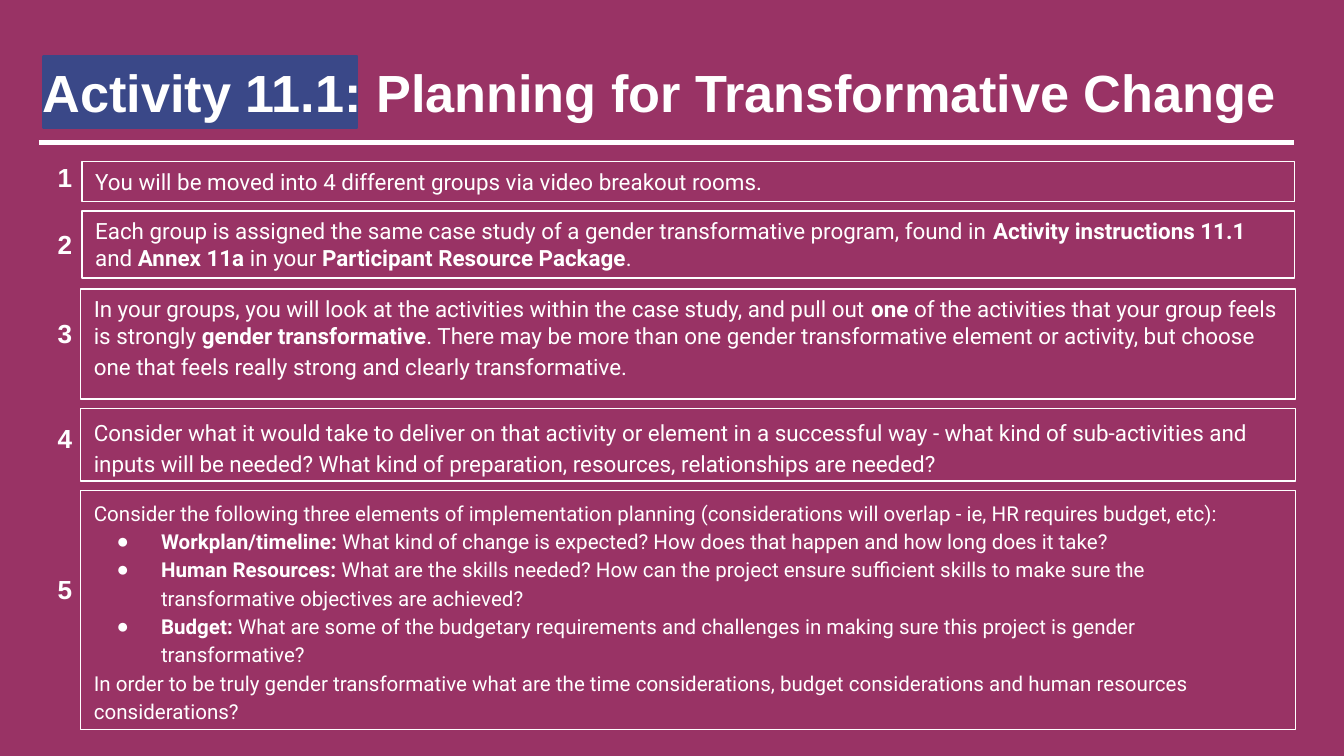
from dataclasses import dataclass
from typing import Optional

from lxml import etree
from pptx import Presentation
from pptx import util as u
from pptx.dml.color import RGBColor
from pptx.enum import shapes, text
from pptx.oxml import ns

COLORS = {"plum": "993365", "navy": "3A4888", "white": "FFFFFF"}
TITLE_FORMAT = {"name": "Arial", "size": u.Pt(28), "bold": True}
NUMBER_FORMAT = {"name": "Arial", "size": u.Pt(14), "bold": True}
BULLET = "• "  # marks a bulleted paragraph in the step wording


@dataclass
class Step:
    left: float
    top: float
    width: float
    height: float
    number_top: float
    paragraphs: list[str]  # bold stretches stand between ** marks
    size: int = 12
    spacing: Optional[float] = None
    end_space: Optional[int] = None  # size of a closing space


STEPS = [
    Step(0.61, 1.2, 9.02, 0.3, 1.1, [
        "You will be moved into 4 different groups via video breakout rooms."]),
    Step(0.61, 1.57, 9.02, 0.5, 1.6, [
        "Each group is assigned the same case study of a gender transformative program, "
        "found in **Activity instructions 11.1 **and **Annex 11a **in your "
        "**Participant Resource Package**."]),
    Step(0.6, 2.15, 9.04, 0.82, 2.26, [
        "In your groups, you will look at the activities within the case study, and pull out "
        "**one **of the activities that your group feels is strongly "
        "**gender transformative**. There may be more than one gender transformative element "
        "or activity, but choose one that feels really strong and clearly transformative."],
        end_space=14),
    Step(0.6, 3.04, 9.04, 0.54, 3.04, [
        "Consider what it would take to deliver on that activity or element in a successful "
        "way - what kind of sub-activities and inputs will be needed? What kind of "
        "preparation, resources, relationships are needed?"], spacing=1.15),
    Step(0.6, 3.65, 9.04, 1.78, 4.17, [
        "Consider the following three elements of implementation planning "
        "(considerations will overlap - ie, HR requires budget, etc):",
        BULLET + "**Workplan/timeline: **What kind of change is expected? "
        "How does that happen and how long does it take?",
        BULLET + "**Human Resources: **What are the skills needed? How can the project ensure "
        "sufficient skills to make sure the transformative objectives are achieved?",
        BULLET + "**Budget: **What are some of the budgetary requirements and challenges in "
        "making sure this project is gender transformative?",
        "In order to be truly gender transformative what are the time considerations, "
        "budget considerations and human resources considerations?"],
        size=11, spacing=1.15),
]


def color(name: str) -> RGBColor:
    return RGBColor.from_string(COLORS[name])


def add_run(paragraph, wording: str, style: dict) -> None:
    run = paragraph.add_run()
    run.text = wording
    for key, value in style.items():
        setattr(run.font, key, value)
    run.font.color.rgb = color("white")


def set_frame(frame, inset: float) -> None:
    settings = {
        "word_wrap": True, "auto_size": text.MSO_AUTO_SIZE.SHAPE_TO_FIT_TEXT,
        "vertical_anchor": text.MSO_ANCHOR.TOP,
        "margin_left": u.Inches(0.1), "margin_right": u.Inches(0.1),
        "margin_top": u.Inches(inset), "margin_bottom": u.Inches(inset),
    }
    for key, value in settings.items():
        setattr(frame, key, value)


def add_bullet(paragraph) -> None:
    props = paragraph._p.get_or_add_pPr()
    props.set("marL", str(u.Inches(0.5)))
    props.set("indent", str(u.Inches(-0.33)))
    tint = etree.SubElement(props, ns.qn("a:buClr"))
    etree.SubElement(tint, ns.qn("a:srgbClr"), val=COLORS["white"])
    etree.SubElement(props, ns.qn("a:buFont"), typeface="Arial")
    etree.SubElement(props, ns.qn("a:buChar"), char="●")


def add_label(slide, wording: str, box: tuple, inset: float, style: dict) -> None:
    label = slide.shapes.add_textbox(*map(u.Inches, box))
    set_frame(label.text_frame, inset)
    add_run(label.text_frame.paragraphs[0], wording, style)


def add_rectangle(slide, box: tuple, line: str, weight: float, fill: Optional[str] = None):
    rectangle = slide.shapes.add_shape(shapes.MSO_SHAPE.RECTANGLE, *map(u.Inches, box))
    rectangle.shadow.inherit = False
    if fill:
        rectangle.fill.solid()
        rectangle.fill.fore_color.rgb = color(fill)
    else:
        rectangle.fill.background()
    rectangle.line.color.rgb = color(line)
    rectangle.line.width = u.Pt(weight)
    return rectangle


def add_step(slide, step: Step) -> None:
    box = (step.left, step.top, step.width, step.height)
    frame = add_rectangle(slide, box, "white", 0.75).text_frame
    set_frame(frame, 0.05)
    for index, wording in enumerate(step.paragraphs):
        paragraph = frame.add_paragraph() if index else frame.paragraphs[0]
        paragraph.alignment = text.PP_ALIGN.LEFT
        if step.spacing:
            paragraph.line_spacing = step.spacing
        if wording.startswith(BULLET):
            add_bullet(paragraph)
        for part, stretch in enumerate(wording.removeprefix(BULLET).split("**")):
            if stretch:
                add_run(paragraph, stretch, {
                    "name": "Roboto", "size": u.Pt(step.size), "bold": part % 2 == 1})
    if step.end_space:
        add_run(paragraph, " ", {"name": "Roboto", "size": u.Pt(step.end_space)})


def main() -> None:
    deck = Presentation()
    deck.slide_width = u.Inches(10)
    deck.slide_height = deck.slide_width * 9 // 16
    slide = deck.slides.add_slide(deck.slide_layouts[6])
    slide.background.fill.solid()
    slide.background.fill.fore_color.rgb = color("plum")

    # Title with its highlight and rule
    rule = slide.shapes.add_connector(
        shapes.MSO_CONNECTOR.STRAIGHT, *map(u.Inches, (0.29, 1.06, 9.63, 1.06)))
    rule.line.color.rgb = color("white")
    rule.line.width = u.Pt(3)
    etree.SubElement(rule._element.spPr, ns.qn("a:effectLst"))
    add_rectangle(slide, (0.33, 0.42, 2.32, 0.53), "navy", 2, fill="navy")
    add_label(slide, "Activity 11.1: Planning for Transformative Change",
              (0.22, 0.4, 12.79, 0.57), 0.05, TITLE_FORMAT)

    # Instruction boxes, then their numbers
    for step in STEPS:
        add_step(slide, step)
    for number, step in enumerate(STEPS, start=1):
        add_label(slide, str(number), (0.33, step.number_top, 0.32, 0.44), 0.1, NUMBER_FORMAT)

    deck.save("out.pptx")


if __name__ == "__main__":
    main()
